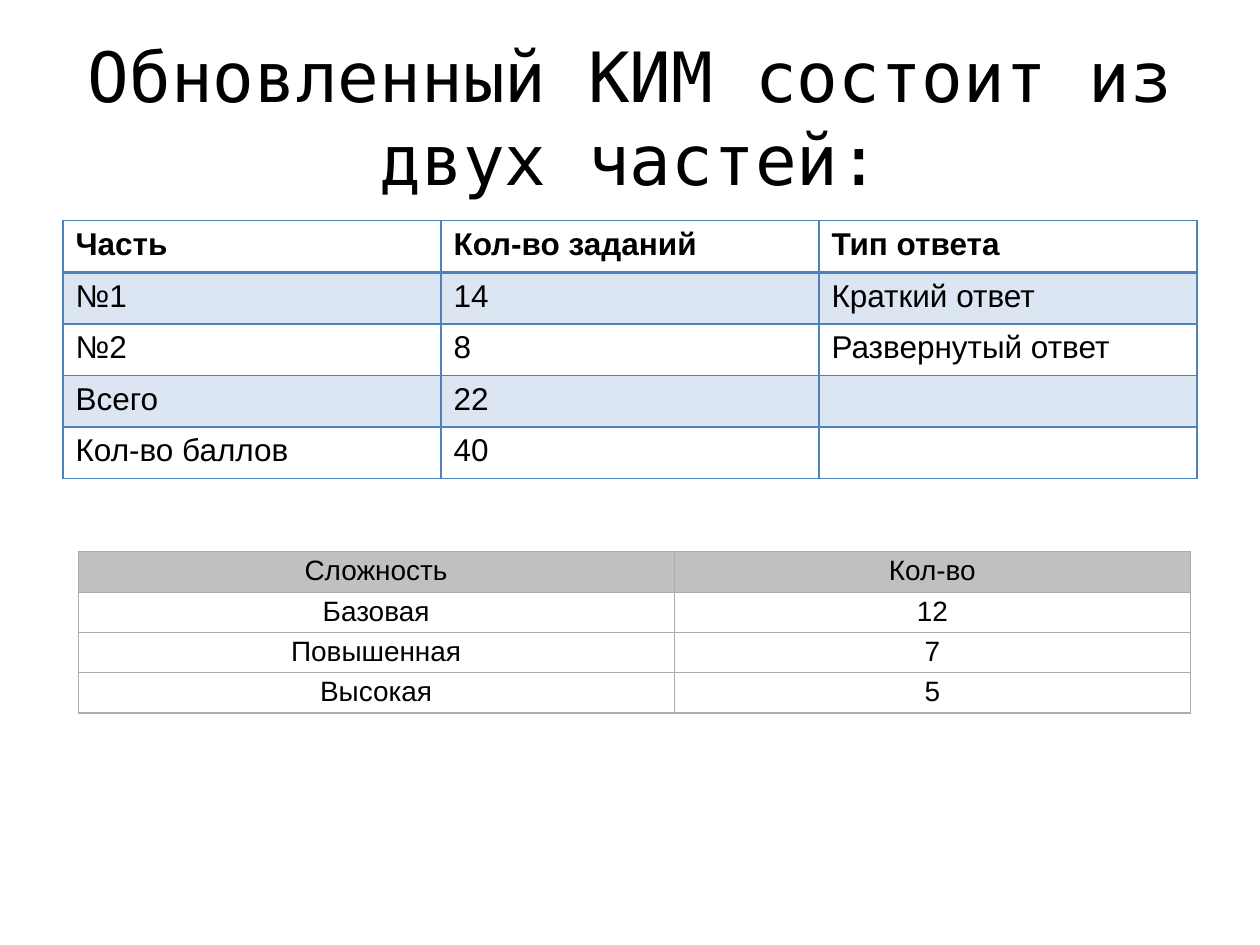
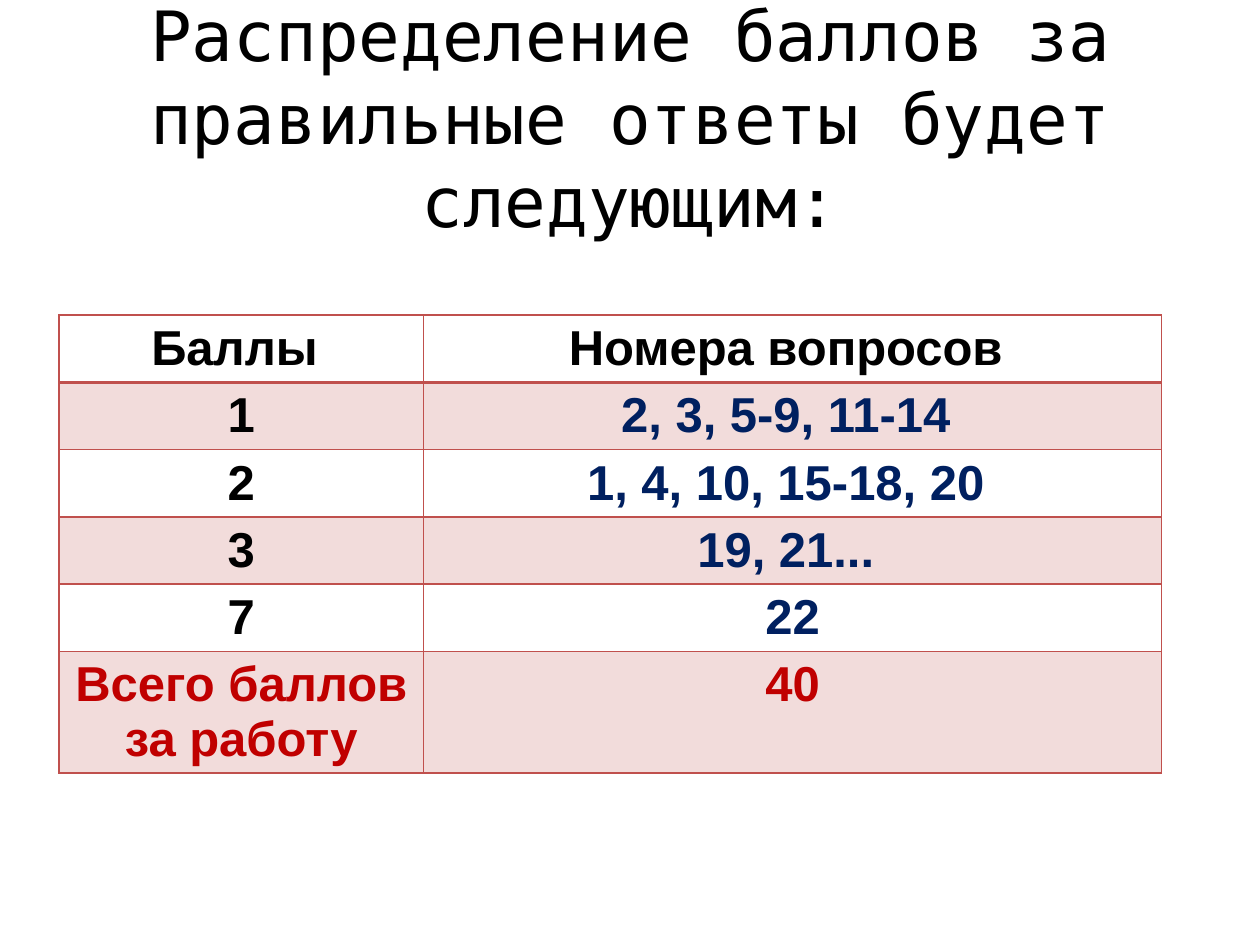
from dataclasses import dataclass
from typing import Optional

from lxml import etree
from pptx import Presentation
from pptx import util as u
from pptx.dml.color import RGBColor
from pptx.enum import text
from pptx.oxml.ns import qn

TITLE_FONT = "DejaVu Sans Mono"
BODY_FONT = "Arial"
BLACK, WHITE = "000000", "FFFFFF"
BLUE, PALE_BLUE = "4F81BD", "DCE6F2"
RED, PALE_RED = "C0504D", "F2DCDB"
NAVY, DARK_RED = "002060", "C00000"
GREY, SILVER = "ACACAC", "C0C0C0"


@dataclass
class TableStyle:
    border: str
    line_width: float
    header_line_width: float
    header_fill: str
    band_fill: str
    size: int
    centred: bool = True
    bold_header: bool = False
    bold_body: bool = False
    margin: Optional[float] = None


@dataclass
class TableData:
    left: float
    top: float
    column_widths: list[float]
    row_heights: list[float]
    rows: list[list[str]]
    style: TableStyle


PARTS_STYLE = TableStyle(BLUE, 1, 2, WHITE, PALE_BLUE, 18, centred=False, bold_header=True)
DIFFICULTY_STYLE = TableStyle(GREY, 0.75, 0.75, SILVER, WHITE, 16, margin=0.03)
SCORES_STYLE = TableStyle(RED, 1, 2, WHITE, PALE_RED, 28, bold_header=True, bold_body=True)


def colour(value: str) -> RGBColor:
    return RGBColor.from_string(value)


def style_font(font, name: str, size: float, value: str, bold: bool = False) -> None:
    font.name = name
    font.size = u.Pt(size)
    font.bold = bold
    font.color.rgb = colour(value)


def add_page(deck, title: str):
    """Add a title-only slide with the shared title style."""
    page = deck.slides.add_slide(deck.slide_layouts[5])
    box = page.shapes.title
    box.left, box.top = u.Inches(0.5), u.Inches(0.3)
    box.width, box.height = u.Inches(9), u.Inches(1.25)
    frame = box.text_frame
    frame.text = title
    frame.word_wrap = True
    frame.auto_size = text.MSO_AUTO_SIZE.NONE
    frame.vertical_anchor = text.MSO_ANCHOR.MIDDLE
    para = frame.paragraphs[0]
    para.alignment = text.PP_ALIGN.CENTER
    style_font(para.runs[0].font, TITLE_FONT, 39.6, BLACK)
    return page


def set_borders(cell, value: str, widths: dict[str, float]) -> None:
    properties = cell._tc.get_or_add_tcPr()
    for side, width in widths.items():
        line = etree.SubElement(properties, qn(f"a:ln{side}"), w=str(u.Pt(width)))
        fill = etree.SubElement(line, qn("a:solidFill"))
        etree.SubElement(fill, qn("a:srgbClr"), val=value)


def format_cell(cell, row: int, style: TableStyle) -> None:
    # Borders: the line under the header may be heavier
    top = style.header_line_width if row == 1 else style.line_width
    bottom = style.header_line_width if row == 0 else style.line_width
    side = style.line_width
    set_borders(cell, style.border, {"L": side, "R": side, "T": top, "B": bottom})

    # Header fill, then alternating bands
    band = style.band_fill if row % 2 else WHITE
    cell.fill.solid()
    cell.fill.fore_color.rgb = colour(band if row else style.header_fill)

    if style.margin is not None:
        margin = u.Inches(style.margin)
        cell.margin_left = cell.margin_right = margin
        cell.margin_top = cell.margin_bottom = margin

    para = cell.text_frame.paragraphs[0]
    para.alignment = text.PP_ALIGN.CENTER if style.centred else text.PP_ALIGN.LEFT
    bold = style.bold_body if row else style.bold_header
    for span in para.runs:
        style_font(span.font, BODY_FONT, style.size, BLACK, bold)


def add_table(page, data: TableData):
    frame = page.shapes.add_table(
        len(data.rows), len(data.column_widths),
        u.Inches(data.left), u.Inches(data.top),
        u.Inches(sum(data.column_widths)), u.Inches(sum(data.row_heights)))
    table = frame.table
    for column, width in zip(table.columns, data.column_widths):
        column.width = u.Inches(width)
    for row, height in zip(table.rows, data.row_heights):
        row.height = u.Inches(height)
    for row, values in enumerate(data.rows):
        for column, value in enumerate(values):
            cell = table.cell(row, column)
            cell.text_frame.text = value
            format_cell(cell, row, data.style)
    return table


def recolour(cell, value: str) -> None:
    for span in cell.text_frame.paragraphs[0].runs:
        span.font.color.rgb = colour(value)


def build_parts_page(deck) -> None:
    page = add_page(deck, "Обновленный КИМ состоит из двух частей:")
    add_table(page, TableData(0.5, 1.75, [3] * 3, [0.41] * 5, [
        ["Часть", "Кол-во заданий", "Тип ответа"],
        ["№1", "14", "Краткий ответ"],
        ["№2", "8", "Развернутый ответ"],
        ["Всего", "22", ""],
        ["Кол-во баллов", "40", ""],
    ], PARTS_STYLE))
    add_table(page, TableData(0.62, 4.38, [4.73, 4.1], [0.32] * 4, [
        ["Сложность", "Кол-во"],
        ["Базовая", "12"],
        ["Повышенная", "7"],
        ["Высокая", "5"],
    ], DIFFICULTY_STYLE))


def build_scores_page(deck) -> None:
    page = add_page(deck, "Распределение баллов за правильные ответы будет следующим:")
    scores = add_table(page, TableData(0.47, 2.5, [2.89, 5.86], [0.53] * 5 + [0.96], [
        ["Баллы ", "Номера вопросов "],
        ["1", "2, 3, 5-9, 11-14 "],
        ["2", "1, 4, 10, 15-18, 20 "],
        ["3", "19, 21... "],
        ["7", "22"],
        ["Всего баллов за работу", "40"],
    ], SCORES_STYLE))

    # Question numbers in navy, the total row in dark red
    total_row = len(scores.rows) - 1
    for row in range(1, total_row):
        recolour(scores.cell(row, 1), NAVY)
    for column in range(2):
        recolour(scores.cell(total_row, column), DARK_RED)


def main() -> None:
    deck = Presentation()
    deck.slide_width, deck.slide_height = u.Inches(10), u.Inches(7.5)
    build_parts_page(deck)
    build_scores_page(deck)
    deck.save("out.pptx")


if __name__ == "__main__":
    main()
